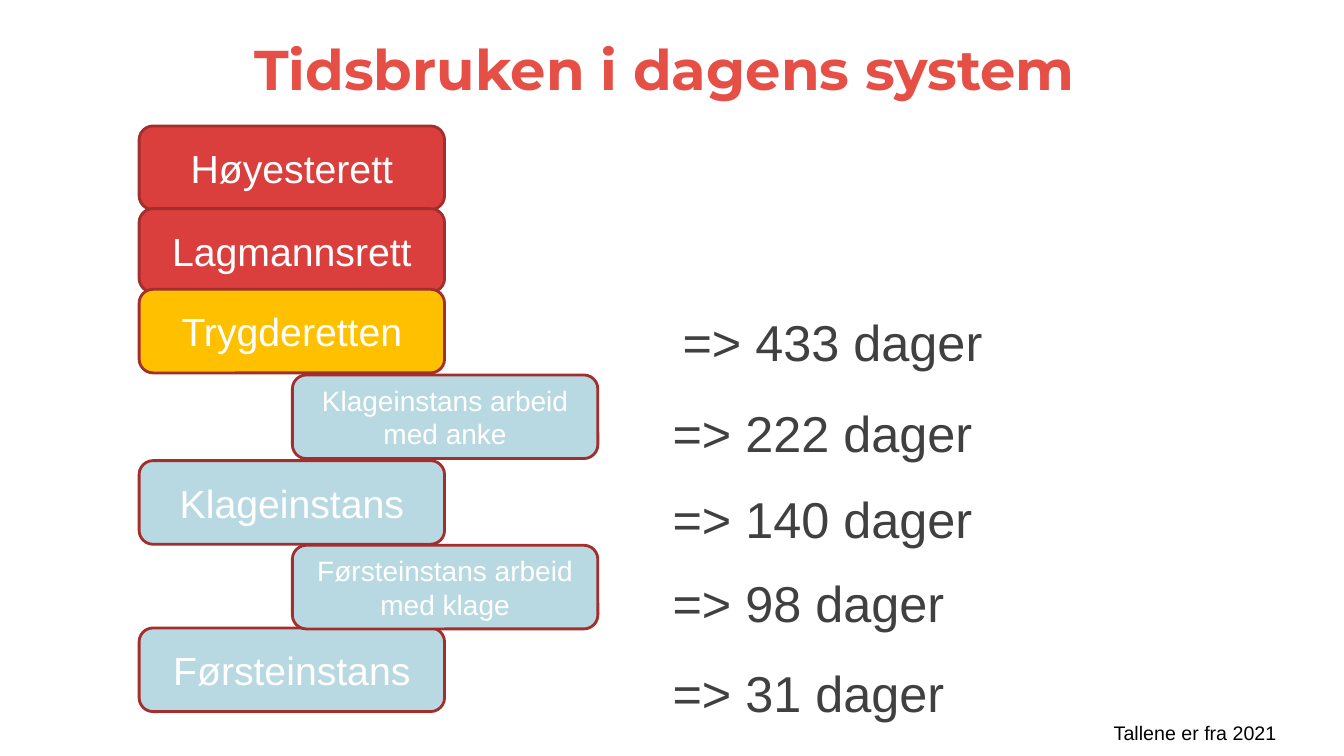
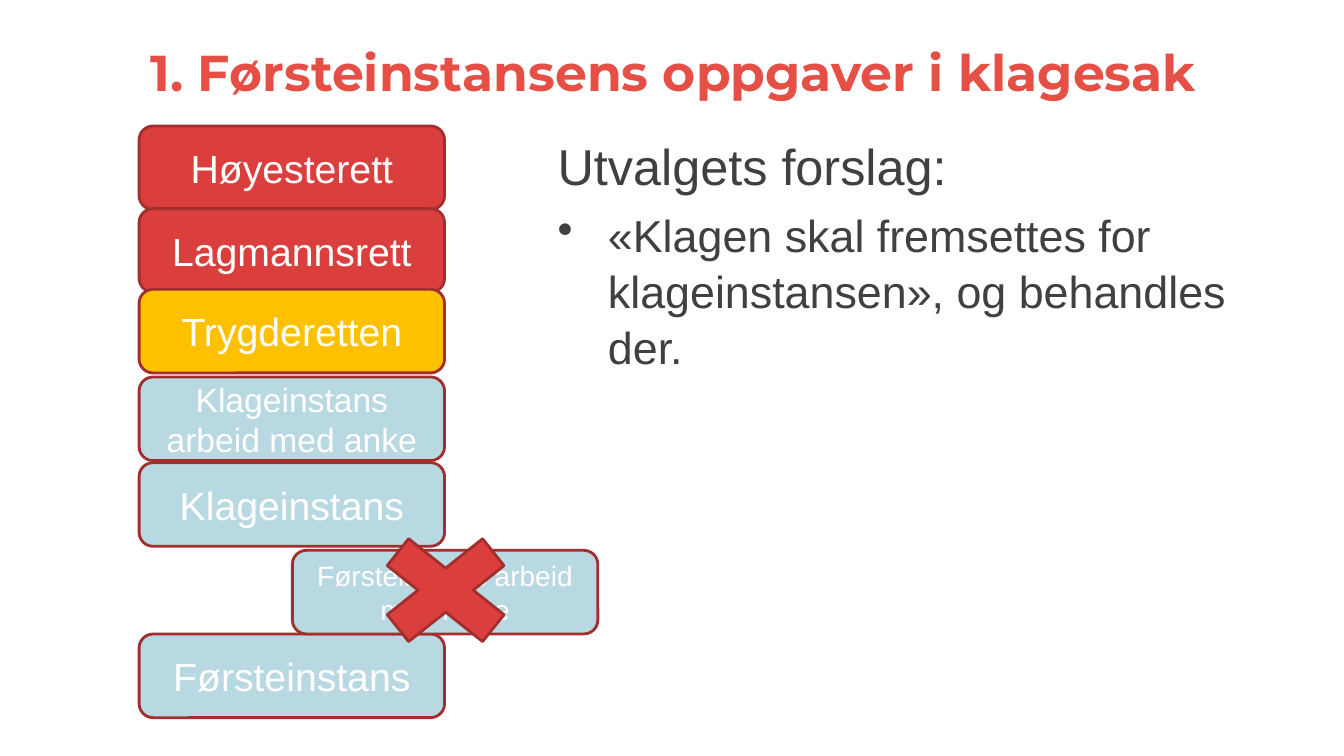
from lxml import etree
from pptx import Presentation
from pptx.dml.color import RGBColor
from pptx.enum import shapes, text
from pptx.oxml import ns
from pptx.util import Inches, Pt

# Colours and fonts
CORAL = RGBColor(0xE5, 0x4F, 0x46)
RED = RGBColor(0xDB, 0x3F, 0x3D)
EDGE = RGBColor(0xA2, 0x2F, 0x2D)
GOLD = RGBColor(0xFF, 0xC0, 0x00)
BLUE = RGBColor(0xB8, 0xD9, 0xE2)
GREY = RGBColor(0x40, 0x40, 0x40)
WHITE = RGBColor(0xFF, 0xFF, 0xFF)
BLACK = RGBColor(0, 0, 0)
HEAD, BODY = "Montserrat", "Arial"

# Shared places of the boxes, in inches
LEFT, SIDE = 1.38, 2.9
WIDE, HIGH = 3.03, 0.83

FORM = shapes.MSO_SHAPE
ALIGN = text.PP_ALIGN
ANCHOR = text.MSO_ANCHOR


def write(para, words, size, color=GREY, font=BODY, bold=False,
          align=ALIGN.LEFT, before=0, indent=0, bullet=False, line=None):
    """Fill one paragraph with formatted text."""
    props = para._p.get_or_add_pPr()
    if indent:
        props.set("marL", str(Inches(indent)))
    if bullet:
        props.set("indent", str(-Inches(indent)))
        mark = etree.SubElement(props, ns.qn("a:buChar"))
        mark.set("char", "•")
    para.text = words
    para.alignment = align
    para.space_before = Pt(before)
    if line:
        para.line_spacing = line
    para.font.size = Pt(size)
    para.font.name = font
    para.font.bold = bold
    para.font.color.rgb = color


def frame(slide, x, y, w, h, anchor=ANCHOR.TOP):
    """Add a wrapping text box without margins."""
    area = slide.shapes.add_textbox(
        Inches(x), Inches(y), Inches(w), Inches(h)).text_frame
    area.word_wrap = True
    area.margin_left = area.margin_right = 0
    area.margin_top = area.margin_bottom = 0
    area.vertical_anchor = anchor
    return area


def title(slide, words, size, x, w):
    area = frame(slide, x, 0.3, w, 0.71, ANCHOR.BOTTOM)
    write(area.paragraphs[0], words, size, CORAL, HEAD, True, ALIGN.CENTER)


def shape(slide, form, x, y, w, h, fill, edge=EDGE):
    item = slide.shapes.add_shape(
        form, Inches(x), Inches(y), Inches(w), Inches(h))
    item.shadow.inherit = False
    item.fill.solid()
    item.fill.fore_color.rgb = fill
    item.line.color.rgb = edge
    item.line.width = Pt(2)
    item.text_frame.word_wrap = True
    item.text_frame.vertical_anchor = ANCHOR.MIDDLE
    return item


def box(slide, words, y, fill=BLUE, x=LEFT, size=28):
    item = shape(slide, FORM.ROUNDED_RECTANGLE, x, y, WIDE, HIGH, fill)
    write(item.text_frame.paragraphs[0], words, size, WHITE,
          align=ALIGN.CENTER)


def courts(slide):
    """The three top levels, the same on both slides."""
    box(slide, "Høyesterett", 1.25, RED)
    box(slide, "Lagmannsrett", 2.07, RED)
    box(slide, "Trygderetten", 2.87, GOLD)


def times(slide):
    title(slide, "Tidsbruken i dagens system", 40, 1.38, 10.42)

    # Days at each level
    area = frame(slide, 6.67, 3.09, 6.45, 4)
    rows = [(433, 0), (222, 21.5), (140, 18.5), (98, 16.5), (31, 21.5)]
    for i, (days, gap) in enumerate(rows):
        para = area.add_paragraph() if i else area.paragraphs[0]
        write(para, f"=> {days} dager", 36, before=gap,
              indent=0 if i else 0.1)

    # Levels and the work between them
    courts(slide)
    box(slide, "Klageinstans", 4.57)
    box(slide, "Førsteinstans", 6.23)
    box(slide, "Førsteinstans arbeid med klage", 5.41, x=SIDE, size=20)
    box(slide, "Klageinstans arbeid med anke", 3.72, x=SIDE, size=20)

    # Source note
    note = shape(slide, FORM.RECTANGLE, 9.38, 7.18, 3.38, 0.18, WHITE, WHITE)
    write(note.text_frame.paragraphs[0], "Tallene er fra 2021", 14, BLACK,
          align=ALIGN.RIGHT)


def tasks(slide):
    title(slide, "1. Førsteinstansens oppgaver i klagesak", 36, 0.7, 11.96)

    # Levels, with the step to be removed crossed out
    courts(slide)
    box(slide, "Klageinstans", 4.59)
    box(slide, "Førsteinstans", 6.29)
    box(slide, "Førsteinstans arbeid med klage", 5.46, x=SIDE, size=20)
    box(slide, "Klageinstans arbeid med anke", 3.74, size=24)
    shape(slide, FORM.MATH_MULTIPLY, 3.51, 5.13, 1.82, 1.45, RED)

    # Proposal
    area = frame(slide, 5.53, 1.32, 7.47, 6.02)
    write(area.paragraphs[0], "Utvalgets forslag:", 36, line=1.04)
    write(area.add_paragraph(),
          "«Klagen skal fremsettes for klageinstansen», og behandles der.",
          32, before=7, indent=0.5, bullet=True, line=1.04)


def main():
    deck = Presentation()
    deck.slide_width = Inches(13.33)
    deck.slide_height = Inches(7.5)
    for build in (times, tasks):
        build(deck.slides.add_slide(deck.slide_layouts[6]))
    deck.save("out.pptx")


if __name__ == "__main__":
    main()
